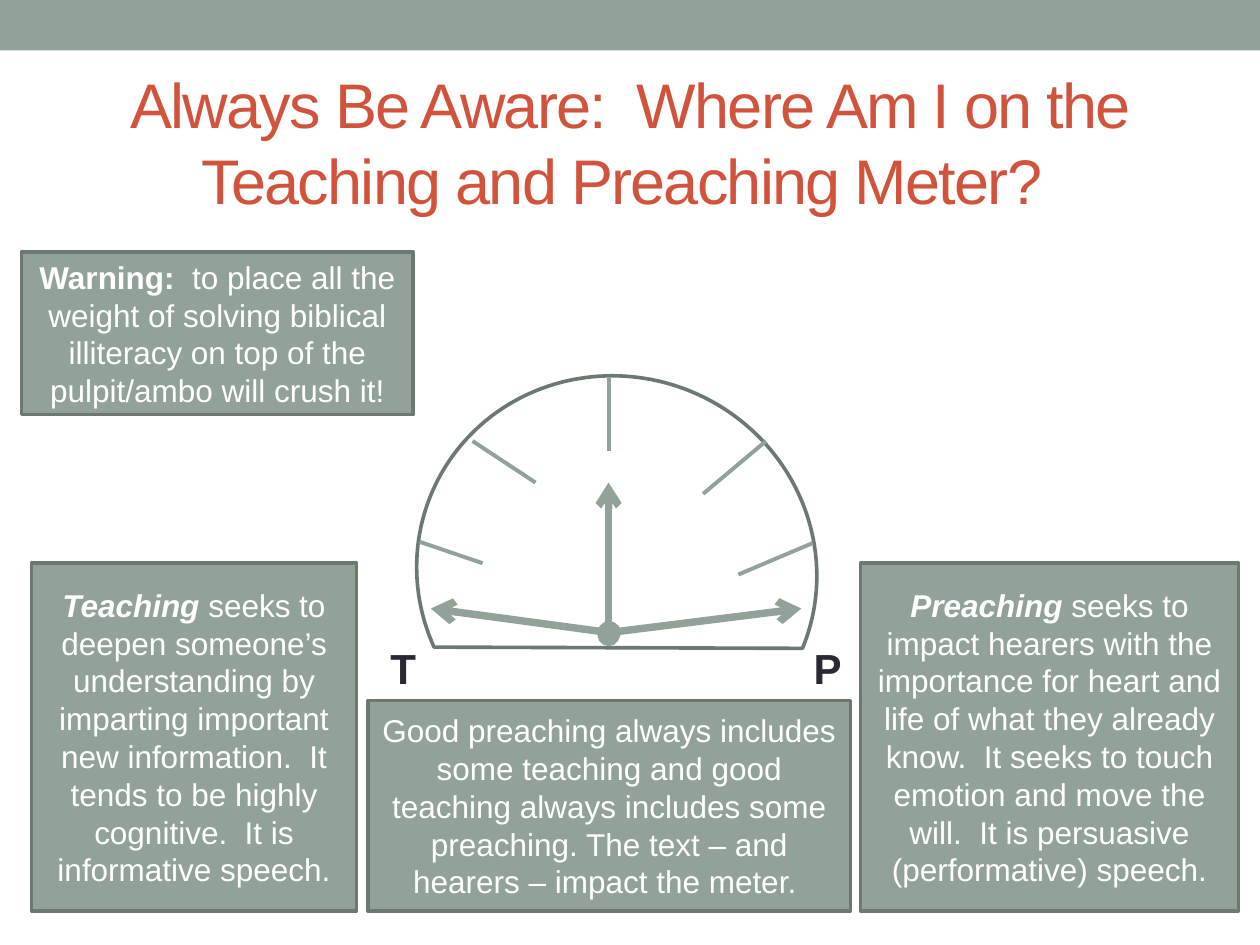
"""Build the slide about the teaching and preaching meter."""
from typing import NamedTuple

from lxml import etree
from pptx import Presentation
from pptx.dml.color import RGBColor
from pptx.enum.shapes import MSO_CONNECTOR, MSO_SHAPE
from pptx.enum.text import MSO_ANCHOR, MSO_AUTO_SIZE, PP_ALIGN
from pptx.oxml.ns import qn
from pptx.util import Inches, Pt

RECT, CHORD = MSO_SHAPE.RECTANGLE, MSO_SHAPE.CHORD
STRAIGHT = MSO_CONNECTOR.STRAIGHT
MIDDLE = MSO_ANCHOR.MIDDLE
CENTER, LEFT = PP_ALIGN.CENTER, PP_ALIGN.LEFT
NO_FIT = MSO_AUTO_SIZE.NONE

FONT = "Arial"
COLORS = {
    "sage": "93A299",
    "edge": "6D7871",
    "title": "D2533C",
    "dark": "292934",
    "white": "FFFFFF",
}


class Note(NamedTuple):
    left: float
    top: float
    width: float
    height: float
    lead: str
    text: str
    italic: bool = False


class Segment(NamedTuple):
    x1: float
    y1: float
    x2: float
    y2: float


NOTES = [
    Note(0.25, 4.47, 2.58, 2.76, "Teaching",
         " seeks to deepen someone’s understanding by imparting important new "
         "information.  It tends to be highly cognitive.  It is informative speech.", True),
    Note(6.83, 4.47, 3, 2.76, "Preaching",
         " seeks to impact hearers with the importance for heart and life of what "
         "they already know.  It seeks to touch emotion and move the will.  It is "
         "persuasive (performative) speech.", True),
    Note(0.17, 2, 3.11, 1.29, "Warning:  ",
         "to place all the weight of solving biblical illiteracy on top of the "
         "pulpit/ambo will crush it!"),
    Note(2.92, 5.56, 3.83, 1.67, "",
         "Good preaching always includes some teaching and good teaching always "
         "includes some preaching. The text – and hearers – impact the meter. "),
]
TICKS = [
    Segment(6.45, 4.31, 5.86, 4.56),
    Segment(4.25, 3.83, 3.75, 3.5),
    Segment(4.83, 3.58, 4.83, 3),
    Segment(6.08, 3.5, 5.58, 3.92),
    Segment(3.83, 4.47, 3.33, 4.3),
]
NEEDLES = [
    Segment(4.83, 5.04, 4.83, 3.83),
    Segment(4.83, 5.02, 3.42, 4.83),
    Segment(4.84, 5.02, 6.36, 4.83),
]
LETTERS = {"T": 3, "P": 6.36}


def rgb(name: str) -> RGBColor:
    return RGBColor.from_string(COLORS[name])


def add_run(p, text: str, size: float, color: str, bold: bool = False, italic: bool = False):
    r = p.add_run()
    r.text = text
    r.font.name, r.font.size = FONT, Pt(size)
    r.font.bold, r.font.italic = bold, italic
    r.font.color.rgb = rgb(color)
    return r


def add_shape(s, kind, left: float, top: float, width: float, height: float,
              fill: str = "", line: str = ""):
    sp = s.shapes.add_shape(kind, Inches(left), Inches(top), Inches(width), Inches(height))
    sp.shadow.inherit = False
    if fill:
        sp.fill.solid()
        sp.fill.fore_color.rgb = rgb(fill)
    else:
        sp.fill.background()
    if line:
        sp.line.color.rgb = rgb(line)
        sp.line.width = Pt(2.08)
    else:
        sp.line.fill.background()
    return sp


def add_note(s, note: Note) -> None:
    sp = add_shape(s, RECT, *note[:4], fill="sage", line="edge")
    tf = sp.text_frame
    tf.word_wrap, tf.vertical_anchor = True, MIDDLE
    p = tf.paragraphs[0]
    p.alignment = CENTER
    if note.lead:
        add_run(p, note.lead, 18, "white", True, note.italic)
    add_run(p, note.text, 18, "white")


def add_line(s, seg: Segment, width: float, needle: bool = False) -> None:
    line = s.shapes.add_connector(STRAIGHT, *(Inches(v) for v in seg))
    line.line.color.rgb = rgb("sage")
    line.line.width = Pt(width)
    if needle:
        ln = line.line._get_or_add_ln()
        etree.SubElement(ln, qn("a:headEnd"), type="oval")
        etree.SubElement(ln, qn("a:tailEnd"), type="arrow")
    etree.SubElement(line._element.spPr, qn("a:effectLst"))


def add_letter(s, letter: str, left: float) -> None:
    sp = s.shapes.add_textbox(Inches(left), Inches(5.05), Inches(0.58), Inches(0.5))
    tf = sp.text_frame
    tf.word_wrap = True
    p = tf.paragraphs[0]
    p.alignment = LEFT
    add_run(p, letter, 24, "dark", True)


def add_title(s, text: str) -> None:
    sp = s.shapes.title
    sp.left, sp.top, sp.width, sp.height = (Inches(v) for v in (0.5, 0.58, 9, 1.08))
    tf = sp.text_frame
    tf.word_wrap, tf.auto_size, tf.vertical_anchor = True, NO_FIT, MIDDLE
    p = tf.paragraphs[0]
    p.alignment = CENTER
    r = add_run(p, text, 36, "title")
    r.font._element.set("spc", "-100")


def main() -> None:
    prs = Presentation()
    prs.slide_width, prs.slide_height = Inches(10), Inches(7.5)
    s = prs.slides.add_slide(prs.slide_layouts[5])
    add_shape(s, RECT, 0, 0, 10, 0.4, fill="sage")
    add_title(s, "Always Be Aware:  Where Am I on the Teaching and Preaching Meter? ")
    dial = add_shape(s, CHORD, 3.35, 2.94, 3.09, 3.19, line="edge")
    dial.rotation = 112.5
    for tick in TICKS:
        add_line(s, tick, 2.25)
    for needle in NEEDLES:
        add_line(s, needle, 4.25, needle=True)
    for note in NOTES:
        add_note(s, note)
    for letter, left in LETTERS.items():
        add_letter(s, letter, left)
    prs.save("out.pptx")


if __name__ == "__main__":
    main()
